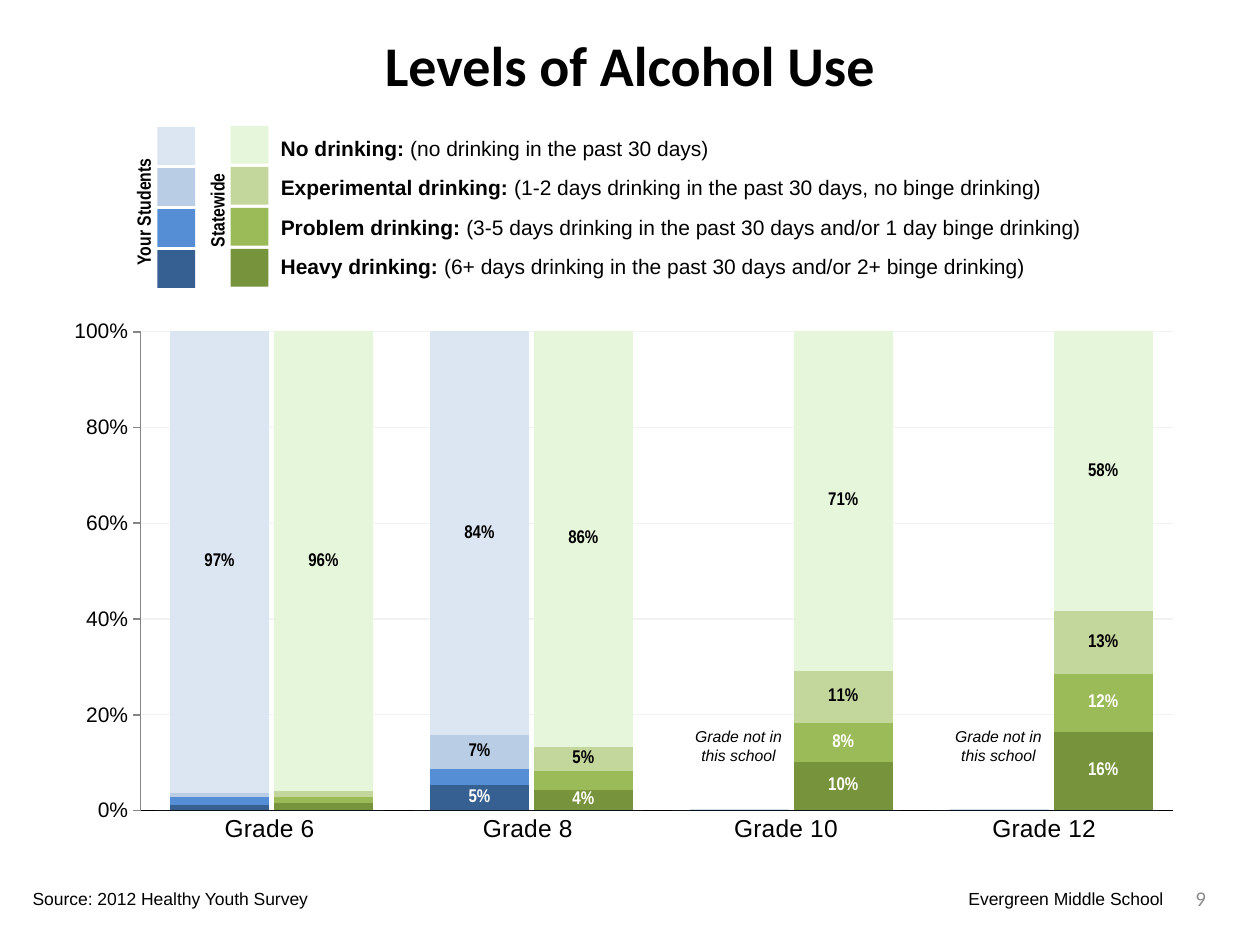
import pptx
import pptx.chart.data
import pptx.dml.color
import pptx.enum.chart
import pptx.enum.shapes
import pptx.enum.text
import pptx.oxml
import pptx.oxml.ns
import pptx.util

COLUMNS, ROWS = 100, 75  # grid cells across and down the slide

THEME = {
    "ink": "000000", "light": "FFFFFF", "muted": "8C8C8C",
    "axis": "868686", "grid": "F2F2F2",
    "students": ["DCE6F2", "B9CDE5", "558ED5", "376092"],
    "state": ["E6F6DA", "C3D69B", "9BBB59", "77933C"],
    "title_font": "Calibri", "body_font": "Arial", "narrow_font": "Arial Narrow",
    "title": 32, "category": 14, "body": 12, "key": 11,
    "value": 10.5, "footer": 10, "note": 9,
}

TITLE = "Levels of Alcohol Use"
LEVELS = [  # lightest to heaviest
    ("No drinking: ", "(no drinking in the past 30 days)", 36.3),
    ("Experimental drinking: ", "(1-2 days drinking in the past 30 days, no binge drinking)", 62.9),
    ("Problem drinking: ", "(3-5 days drinking in the past 30 days and/or 1 day binge drinking)", 66.1),
    ("Heavy drinking: ", "(6+ days drinking in the past 30 days and/or 2+ binge drinking)", 61.6),
]
# group, swatch left and top, label frame
KEYS = [
    ("Your Students", "students", 12.5, 10.1, (6.1, 15.3, 10.6, 2.9)),
    ("Statewide", "state", 18.3, 10, (13.3, 15.2, 7.9, 2.9)),
]
# heavy to none, each as (statewide, your students)
GRADES = {
    "Grade 6": [(0.013, 0.009), (0.013, 0.017), (0.012, 0.009), (0.96, 0.97)],
    "Grade 8": [(0.04, 0.05), (0.039, 0.034), (0.05, 0.07), (0.86, 0.84)],
    "Grade 10": [(0.1, 0), (0.08, 0), (0.11, 0), (0.71, 0)],
    "Grade 12": [(0.16, 0), (0.12, 0), (0.13, 0), (0.58, 0)],
}
MISSING = "Grade not in this school"
GRADE_LEFT, GRADE_PITCH = 13.3, 20.63

ALIGN = pptx.enum.text.PP_ALIGN
ANCHOR = pptx.enum.text.MSO_ANCHOR
CHART = pptx.enum.chart

deck = pptx.Presentation()
deck.slide_width, deck.slide_height = pptx.util.Inches(10), pptx.util.Inches(7.5)
page = deck.slides.add_slide(deck.slide_layouts[6])


def place(left, top, width, height):
    """Turn grid cells into slide lengths."""
    across, down = deck.slide_width / COLUMNS, deck.slide_height / ROWS
    return [round(n) for n in (left * across, top * down, width * across, height * down)]


def color(name):
    return pptx.dml.color.RGBColor.from_string(THEME.get(name, name))


def style(font, size, family="body_font", ink="ink", bold=False, italic=False):
    font.size, font.name = pptx.util.Pt(THEME[size]), THEME[family]
    font.bold, font.italic = bold, italic
    font.color.rgb = color(ink)


def add_text(frame, text, size, align=ALIGN.LEFT, anchor=ANCHOR.TOP, wrap=True, **look):
    box = page.shapes.add_textbox(*place(*frame))
    box.text_frame.word_wrap = wrap
    box.text_frame.vertical_anchor = anchor
    box.text_frame.text = text
    para = box.text_frame.paragraphs[0]
    para.alignment = align
    style(para.runs[0].font, size, **look)
    return box


def add_chart(frame, categories, rows, gap, inner):
    """Add a transparent 100% column chart whose inner plot area is given in shares."""
    data = pptx.chart.data.CategoryChartData(number_format="0%")
    data.categories = categories
    for number, values in enumerate(rows, 1):
        data.add_series(f"Series {number}", values)
    chart = page.shapes.add_chart(
        CHART.XL_CHART_TYPE.COLUMN_STACKED_100, *place(*frame), data).chart
    chart.has_legend = chart.has_title = False
    style(chart.font, "footer", "title_font")
    plot = chart.plots[0]
    plot.gap_width, plot.overlap, plot.vary_by_categories = gap, 100, False
    scale = chart.value_axis
    scale.minimum_scale, scale.maximum_scale, scale.major_unit = 0, 1, 0.2
    chart.category_axis.major_tick_mark = CHART.XL_TICK_MARK.NONE

    space = pptx.oxml.ns.nsdecls("c", "a")
    clear = f"<c:spPr {space}><a:noFill/><a:ln><a:noFill/></a:ln></c:spPr>"
    body = chart._chartSpace.find(pptx.oxml.ns.qn("c:chart"))
    body.addnext(pptx.oxml.parse_xml(clear))
    area = body.find(pptx.oxml.ns.qn("c:plotArea"))
    area.append(pptx.oxml.parse_xml(clear))
    for old in area.findall(pptx.oxml.ns.qn("c:layout")):
        area.remove(old)
    sizes = "".join(f'<c:{tag} val="{share}"/>' for tag, share in zip("xywh", inner))
    area.insert(0, pptx.oxml.parse_xml(
        f'<c:layout {space}><c:manualLayout><c:layoutTarget val="inner"/>'
        f'<c:xMode val="edge"/><c:yMode val="edge"/>{sizes}</c:manualLayout></c:layout>'))
    return chart


def add_axes():
    chart = add_chart((5.9, 25, 87.4, 43), list(GRADES), [[0] * len(GRADES)], 13,
                      (0.06, 0.031, 0.938, 0.884))
    scale, names = chart.value_axis, chart.category_axis
    style(names.tick_labels.font, "category")
    style(scale.tick_labels.font, "body")
    scale.tick_labels.number_format = "0%"
    scale.tick_labels.number_format_is_linked = False
    scale.major_tick_mark = CHART.XL_TICK_MARK.OUTSIDE
    grid = scale.major_gridlines.format.line
    for line, name, width in ((names.format.line, "ink", 1),
                              (scale.format.line, "axis", 1), (grid, "grid", 0.75)):
        line.color.rgb, line.width = color(name), pptx.util.Pt(width)


def add_grade(left, rows):
    chart = add_chart((left, 25.5, 16.5, 40.5), ["1", "2"], rows, 5, (0, 0.02, 1, 0.937))
    chart.value_axis.has_major_gridlines = False
    chart.value_axis.major_tick_mark = CHART.XL_TICK_MARK.NONE
    chart.category_axis.reverse_order = True
    for axis in (chart.value_axis, chart.category_axis):
        axis.tick_label_position = CHART.XL_TICK_LABEL_POSITION.NONE
        axis.format.line.fill.background()
    for level, series in enumerate(chart.plots[0].series):
        for index, group in enumerate(("state", "students")):
            fill = series.points[index].format.fill
            fill.solid()
            fill.fore_color.rgb = color(THEME[group][-1 - level])
        labels = series.data_labels
        labels.show_value = True
        labels.number_format = '[<0.04]" ";0%'
        labels.number_format_is_linked = False
        labels.position = CHART.XL_LABEL_POSITION.CENTER
        style(labels.font, "value", "narrow_font", "light" if level < 2 else "ink", bold=True)


add_text((2.5, 1.7, 95, 6.7), TITLE, "title", ALIGN.CENTER, ANCHOR.MIDDLE,
         family="title_font", bold=True)

add_axes()
for number, rows in enumerate(GRADES.values()):
    left = GRADE_LEFT + number * GRADE_PITCH
    add_grade(left, rows)
    if not any(students for _, students in rows):
        note = add_text((left + 0.3, 46.7, 7.5, 15), MISSING, "note",
                        ALIGN.CENTER, ANCHOR.BOTTOM, italic=True)
        frame = note.text_frame
        frame.margin_left = frame.margin_right = frame.margin_top = 0
        frame.margin_bottom = pptx.util.Inches(0.1)

for label, group, left, top, frame in KEYS:
    for row, shade in enumerate(THEME[group]):
        swatch = page.shapes.add_shape(pptx.enum.shapes.MSO_SHAPE.RECTANGLE,
                                       *place(left, top + row * 3.25, 3, 3))
        swatch.shadow.inherit = False
        swatch.fill.solid()
        swatch.fill.fore_color.rgb = color(shade)
        swatch.line.fill.background()
    add_text(frame, label, "key", wrap=False, family="narrow_font", bold=True).rotation = 270

for row, (name, meaning, width) in enumerate(LEVELS):
    box = add_text((21.3, 10.3 + row * 3.1, width, 3), name, "body", wrap=False, bold=True)
    span = box.text_frame.paragraphs[0].add_run()
    span.text = meaning
    style(span.font, "body")

add_text((1.6, 70, 24.2, 2.7), "Source: 2012 Healthy Youth Survey", "footer")
add_text((32.5, 70, 60.8, 2.7), "Evergreen Middle School", "footer", ALIGN.RIGHT)
add_text((91.7, 69.3, 5, 4), "9", "body", ALIGN.RIGHT, ANCHOR.MIDDLE,
         family="title_font", ink="muted")

deck.save("out.pptx")
